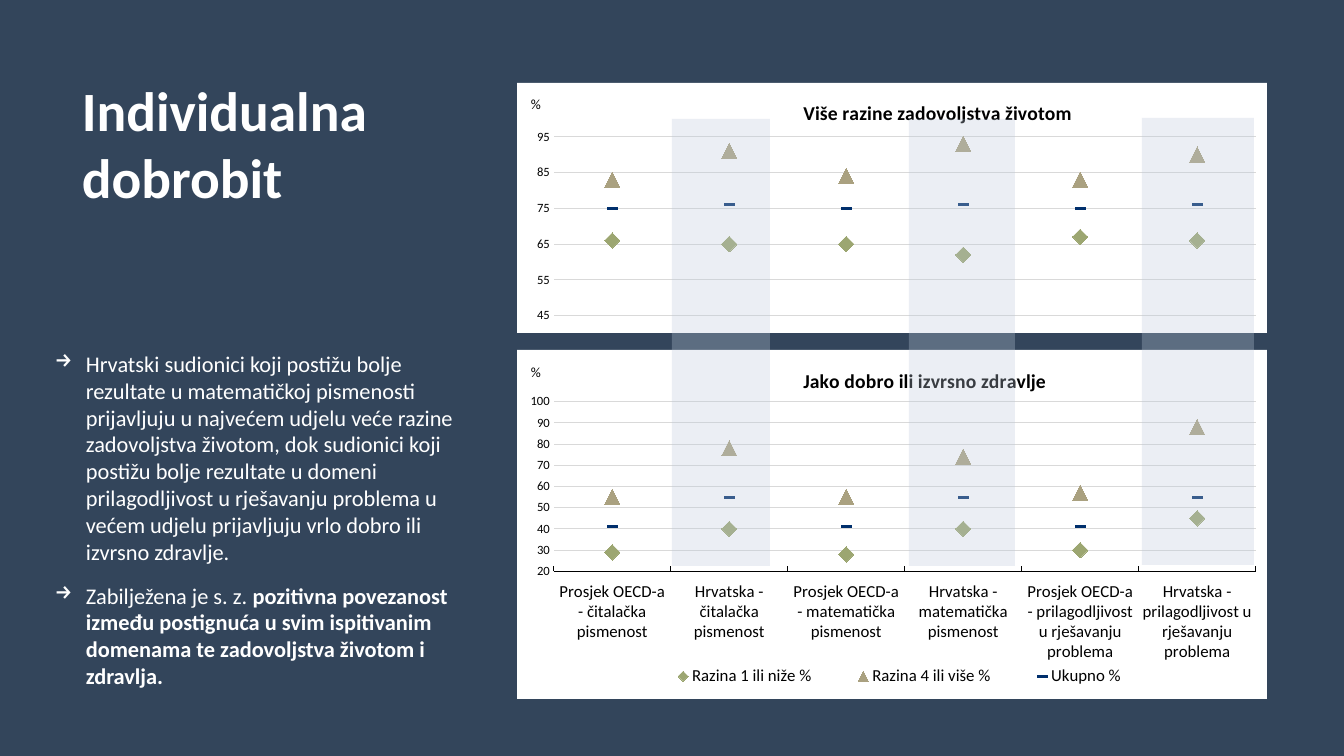
from lxml import etree
from pptx import Presentation
from pptx.chart.data import CategoryChartData
from pptx.dml.color import RGBColor
from pptx.enum.chart import (XL_CHART_TYPE, XL_LEGEND_POSITION, XL_MARKER_STYLE,
                             XL_TICK_LABEL_POSITION, XL_TICK_MARK)
from pptx.enum.shapes import MSO_SHAPE
from pptx.enum.text import MSO_ANCHOR, MSO_AUTO_SIZE
from pptx.oxml import parse_xml
from pptx.oxml.ns import nsdecls, qn
from pptx.util import Pt

LINE_MARKERS = XL_CHART_TYPE.LINE_MARKERS
BOTTOM = XL_LEGEND_POSITION.BOTTOM
DIAMOND, TRIANGLE, DASH = (XL_MARKER_STYLE.DIAMOND, XL_MARKER_STYLE.TRIANGLE,
                           XL_MARKER_STYLE.DASH)
LOW = XL_TICK_LABEL_POSITION.LOW
INSIDE, NO_TICK = XL_TICK_MARK.INSIDE, XL_TICK_MARK.NONE
RECT = MSO_SHAPE.RECTANGLE
MIDDLE, TOP = MSO_ANCHOR.MIDDLE, MSO_ANCHOR.TOP
GROW = MSO_AUTO_SIZE.SHAPE_TO_FIT_TEXT

EMU_PER_PX = 914400 / 100.8
FONT = "Calibri"
NAVY = RGBColor(0x33, 0x45, 0x5B)
WHITE = RGBColor(0xFF, 0xFF, 0xFF)
BLACK = RGBColor(0x00, 0x00, 0x00)
GRID = RGBColor(0xD9, 0xD9, 0xD9)
BAND = RGBColor(0xBD, 0xCA, 0xDB)
GREEN = RGBColor(0x9C, 0xA6, 0x71)
SAND = RGBColor(0xAA, 0xA1, 0x80)
BLUE = RGBColor(0x00, 0x2F, 0x6C)

MARKERS = [(DIAMOND, 11, GREEN), (TRIANGLE, 11, SAND), (DASH, 7, BLUE)]
LEVELS = ["Razina 1 ili niže %", "Razina 4 ili više %", "Ukupno %"]
DOMAINS = ["čitalačka pismenost", "matematička pismenost",
           "prilagodljivost u rješavanju problema"]
GROUPS = [f"{place} - {domain}" for domain in DOMAINS
          for place in ("Prosjek OECD-a", "Hrvatska")]
SATISFACTION = [(66, 65, 65, 62, 67, 66), (83, 91, 84, 93, 83, 90),
                (75, 76, 75, 76, 75, 76)]
HEALTH = [(29, 40, 28, 40, 30, 45), (55, 78, 55, 74, 57, 88),
          (41, 55, 41, 55, 41, 55)]
FINDINGS = [
    [("Hrvatski sudionici koji postižu bolje rezultate u matematičkoj pismenosti "
      "prijavljuju u najvećem udjelu veće razine zadovoljstva životom, dok sudionici "
      "koji postižu bolje rezultate u domeni prilagodljivost u rješavanju problema u "
      "većem udjelu prijavljuju vrlo dobro ili izvrsno zdravlje.", False)],
    [("Zabilježena je s. z. ", False),
     ("pozitivna povezanost između postignuća u svim ispitivanim domenama te "
      "zadovoljstva životom i zdravlja.", True)],
]


def px(n):
    return round(n * EMU_PER_PX)


def box(*lengths):
    return [px(n) for n in lengths]


def style(font, size, color=BLACK, bold=False):
    font.name, font.size, font.bold = FONT, Pt(size), bold
    font.color.rgb = color


def add_text(slide, place, paragraphs, size, anchor=TOP, bullet=None):
    tf = slide.shapes.add_textbox(*box(*place)).text_frame
    tf.word_wrap, tf.vertical_anchor = True, anchor
    if bullet:
        tf.auto_size = GROW
    for i, runs in enumerate(paragraphs):
        p = tf.paragraphs[0] if i == 0 else tf.add_paragraph()
        if bullet:
            pPr = p._p.get_or_add_pPr()
            pPr.set("marL", str(px(31)))
            pPr.set("indent", str(-px(31)))
            etree.SubElement(pPr, qn("a:buChar")).set("char", bullet)
            p.space_after = Pt(12)
        for text, bold in runs:
            r = p.add_run()
            r.text = text
            style(r.font, size, WHITE, bold)


def add_band(slide, place):
    sp = slide.shapes.add_shape(RECT, *box(*place))
    sp.shadow.inherit = False
    sp.line.fill.background()
    sp.fill.solid()
    sp.fill.fore_color.rgb = BAND
    clr = sp._element.spPr.find(".//" + qn("a:srgbClr"))
    etree.SubElement(clr, qn("a:alpha")).set("val", "30000")


def set_layout(parent, index, inner=False, **fractions):
    """Place a chart part by fractions of the chart area."""
    for old in parent.findall(qn("c:layout")):
        parent.remove(old)
    tags = '<c:layoutTarget val="inner"/>' if inner else ""
    tags += '<c:xMode val="edge"/><c:yMode val="edge"/>'
    tags += "".join(f'<c:{k} val="{v}"/>' for k, v in fractions.items())
    parent.insert(index, parse_xml(
        f'<c:layout {nsdecls("c")}><c:manualLayout>{tags}</c:manualLayout></c:layout>'))


def set_title(title, text, size, bold, x, y):
    tf = title.text_frame
    body = tf._txBody.bodyPr
    body.set("rot", "0")
    body.set("vert", "horz")
    r = tf.paragraphs[0].add_run()
    r.text = text
    style(r.font, size, bold=bold)
    set_layout(title._element, 1, x=x, y=y)


def add_marker_chart(slide, place, title, title_y, unit_y, groups, values, low, plot):
    data = CategoryChartData(number_format="General")
    data.categories = groups
    for name, vals in zip(LEVELS, values):
        data.add_series(name, vals)
    chart = slide.shapes.add_chart(LINE_MARKERS, *box(*place), data).chart
    style(chart.font, 10)
    chart.has_legend = False
    space = chart._chartSpace
    space.find(qn("c:chart")).addnext(parse_xml(
        f'<c:spPr {nsdecls("c", "a")}><a:solidFill><a:srgbClr val="{WHITE}"/>'
        '</a:solidFill><a:ln><a:noFill/></a:ln></c:spPr>'))
    chart.has_title = True
    set_title(chart.chart_title, title, 14, True, 0.377, title_y)
    set_layout(space.find(".//" + qn("c:plotArea")), 0, inner=True, **plot)

    # Value axis
    axis = chart.value_axis
    axis.minimum_scale, axis.maximum_scale, axis.major_unit = low, 100, 10
    axis.major_tick_mark, axis.minor_tick_mark = INSIDE, NO_TICK
    axis.format.line.fill.background()
    axis.major_gridlines.format.line.color.rgb = GRID
    axis.major_gridlines.format.line.width = Pt(0.75)
    style(axis.tick_labels.font, 9)
    set_title(axis.axis_title, "%", 10, False, 0.015, unit_y)

    # Markers without joining lines
    for series, (shape, size, color) in zip(chart.plots[0].series, MARKERS):
        series.smooth = False
        series.format.line.fill.background()
        marker = series.marker
        marker.style, marker.size = shape, size
        marker.format.fill.solid()
        marker.format.fill.fore_color.rgb = color
        marker.format.line.fill.background()
    return chart


def show_groups_and_legend(chart):
    axis = chart.category_axis
    axis.tick_label_position = LOW
    axis.major_tick_mark, axis.minor_tick_mark = INSIDE, NO_TICK
    axis.format.line.color.rgb = BLACK
    axis.format.line.width = Pt(0.75)
    style(axis.tick_labels.font, 12)
    chart.has_legend = True
    legend = chart.legend
    legend.position, legend.include_in_layout = BOTTOM, True
    style(legend.font, 12)
    set_layout(legend._element, 1, x=0.16, y=0.9, w=0.7, h=0.07)


def main():
    prs = Presentation()
    prs.slide_width, prs.slide_height = box(1344, 756)
    slide = prs.slides.add_slide(prs.slide_layouts[6])
    slide.background.fill.solid()
    slide.background.fill.fore_color.rgb = NAVY

    # Heading
    add_text(slide, (72, 70, 381, 146), [[("Individualna dobrobit", True)]], 39.6, MIDDLE)

    # Charts
    upper = add_marker_chart(
        slide, (517, 83, 750, 250), "Više razine zadovoljstva životom", 0.05, 0.04,
        [str(n + 1) for n in range(len(GROUPS))], SATISFACTION, 45,
        dict(x=0.049, y=0.144, w=0.936, h=0.787))
    upper.category_axis.visible = False
    lower = add_marker_chart(
        slide, (517, 350, 750, 349), "Jako dobro ili izvrsno zdravlje", 0.04, 0.03,
        GROUPS, HEALTH, 20, dict(x=0.049, y=0.148, w=0.936, h=0.487))
    show_groups_and_legend(lower)

    # Bands over the Croatian results
    for left, top, width in [(672, 119, 98), (909, 119, 106), (1142, 118, 112)]:
        add_band(slide, (left, top, width, 447))

    # Findings
    add_text(slide, (45, 345, 452, 353), FINDINGS, 16, bullet="→")
    prs.save("out.pptx")


if __name__ == "__main__":
    main()
